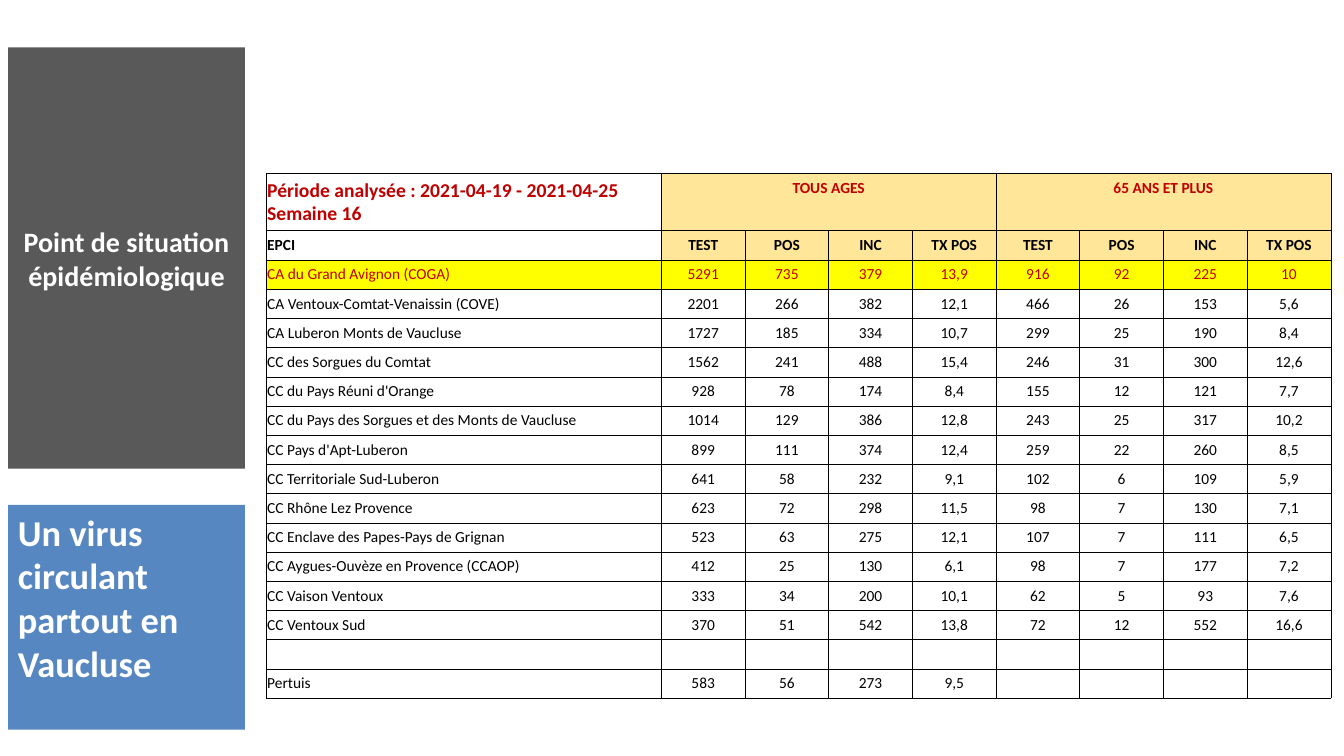
from lxml.etree import SubElement
from pptx import Presentation
from pptx.dml.color import RGBColor
from pptx.enum.shapes import MSO_SHAPE
from pptx.enum.text import MSO_ANCHOR, PP_ALIGN
from pptx.oxml.ns import qn
from pptx.util import Inches, Pt

TITLE = "Point de situation épidémiologique"
CLAIM = "Un virus circulant partout en Vaucluse"
PERIOD = "Période analysée : 2021-04-19 - 2021-04-25 Semaine 16"
GROUPS = ["TOUS AGES", "65 ANS ET PLUS"]
FIELDS = ["TEST", "POS", "INC", "TX POS"]
ROWS = [
    ("CA du Grand Avignon (COGA)", "5291", "735", "379", "13,9", "916", "92", "225", "10"),
    ("CA Ventoux-Comtat-Venaissin (COVE)", "2201", "266", "382", "12,1", "466", "26", "153", "5,6"),
    ("CA Luberon Monts de Vaucluse", "1727", "185", "334", "10,7", "299", "25", "190", "8,4"),
    ("CC des Sorgues du Comtat", "1562", "241", "488", "15,4", "246", "31", "300", "12,6"),
    ("CC du Pays Réuni d'Orange", "928", "78", "174", "8,4", "155", "12", "121", "7,7"),
    ("CC du Pays des Sorgues et des Monts de Vaucluse",
     "1014", "129", "386", "12,8", "243", "25", "317", "10,2"),
    ("CC Pays d'Apt-Luberon", "899", "111", "374", "12,4", "259", "22", "260", "8,5"),
    ("CC Territoriale Sud-Luberon", "641", "58", "232", "9,1", "102", "6", "109", "5,9"),
    ("CC Rhône Lez Provence", "623", "72", "298", "11,5", "98", "7", "130", "7,1"),
    ("CC Enclave des Papes-Pays de Grignan", "523", "63", "275", "12,1", "107", "7", "111", "6,5"),
    ("CC Aygues-Ouvèze en Provence (CCAOP)", "412", "25", "130", "6,1", "98", "7", "177", "7,2"),
    ("CC Vaison Ventoux", "333", "34", "200", "10,1", "62", "5", "93", "7,6"),
    ("CC Ventoux Sud", "370", "51", "542", "13,8", "72", "12", "552", "16,6"),
    ("",) * 9,
    ("Pertuis", "583", "56", "273", "9,5", "", "", "", ""),
]

FONT = "Calibri"
BLACK = RGBColor(0, 0, 0)
WHITE = RGBColor(255, 255, 255)
GREY = RGBColor(0x59, 0x59, 0x59)
BLUE = RGBColor(0x4F, 0x81, 0xBD)
RED = RGBColor(0xC0, 0, 0)
BEIGE = RGBColor(0xFF, 0xE6, 0x99)
YELLOW = RGBColor(255, 255, 0)

LEFT, WIDE = 0.08, 2.35
NAME_W, NUM_W = 3.92, 0.83
TOP_H, ROW_H = 0.57, 0.29


def write(frame, text, size, color, bold, align):
    frame.text = text
    para = frame.paragraphs[0]
    para.alignment = align
    font = para.font
    font.name, font.size, font.bold = FONT, Pt(size), bold
    font.color.rgb = color


def panel(slide, top, height, color):
    box = slide.shapes.add_shape(
        MSO_SHAPE.RECTANGLE, Inches(LEFT), Inches(top), Inches(WIDE), Inches(height))
    box.shadow.inherit = False
    box.fill.solid()
    box.fill.fore_color.rgb = color
    box.line.fill.background()
    return box


def border(cell):
    props = cell._tc.get_or_add_tcPr()
    for place, side in enumerate(("lnL", "lnR", "lnT", "lnB")):
        line = SubElement(props, qn("a:" + side), w=str(Pt(0.5)))
        fill = SubElement(line, qn("a:solidFill"))
        SubElement(fill, qn("a:srgbClr"), val=str(BLACK))
        props.insert(place, line)


def look(row, col):
    if row == 0:
        return (14, RED, True, None) if col == 0 else (11, RED, True, BEIGE)
    if row == 1:
        return 11, BLACK, True, BEIGE if col else None
    if row == 2:
        return 11, RED, False, YELLOW
    return 11, BLACK, False, None if any(ROWS[row - 2]) else WHITE


def fill_table(slide):
    head = [PERIOD]
    for group in GROUPS:
        head += [group] + [""] * (len(FIELDS) - 1)
    grid = [head, ["EPCI"] + FIELDS * len(GROUPS)] + ROWS
    count = len(head)
    frame = slide.shapes.add_table(
        len(grid), count, Inches(2.64), Inches(1.72),
        Inches(NAME_W + NUM_W * (count - 1)), Inches(TOP_H + ROW_H * (len(grid) - 1)))
    table = frame.table
    table.first_row = table.horz_banding = False
    for i, col in enumerate(table.columns):
        col.width = Inches(NUM_W if i else NAME_W)
    for r, texts in enumerate(grid):
        table.rows[r].height = Inches(ROW_H if r else TOP_H)
        for c, text in enumerate(texts):
            cell = table.cell(r, c)
            size, color, bold, back = look(r, c)
            write(cell.text_frame, text, size, color, bold,
                  PP_ALIGN.CENTER if c else PP_ALIGN.LEFT)
            cell.margin_left = cell.margin_right = Inches(0.01)
            if back is None:
                cell.fill.background()
            else:
                cell.fill.solid()
                cell.fill.fore_color.rgb = back
            border(cell)
    for start in range(1, count, len(FIELDS)):
        table.cell(0, start).merge(table.cell(0, start + len(FIELDS) - 1))


def main():
    deck = Presentation()
    deck.slide_width, deck.slide_height = Inches(13.33), Inches(7.5)
    slide = deck.slides.add_slide(deck.slide_layouts[6])

    title = panel(slide, 0.47, 4.18, GREY)
    title.text_frame.vertical_anchor = MSO_ANCHOR.MIDDLE
    write(title.text_frame, TITLE, 20, WHITE, True, PP_ALIGN.CENTER)

    base = panel(slide, 5.01, 2.23, BLUE)
    shade = base.fill._xPr.find(qn("a:solidFill"))[0]
    SubElement(shade, qn("a:alpha"), val="95000")

    claim = slide.shapes.add_textbox(Inches(LEFT), Inches(5.01), Inches(2.12), Inches(2.11))
    claim.text_frame.word_wrap = True
    write(claim.text_frame, CLAIM, 26, WHITE, True, PP_ALIGN.LEFT)

    fill_table(slide)
    deck.save("out.pptx")


if __name__ == "__main__":
    main()
